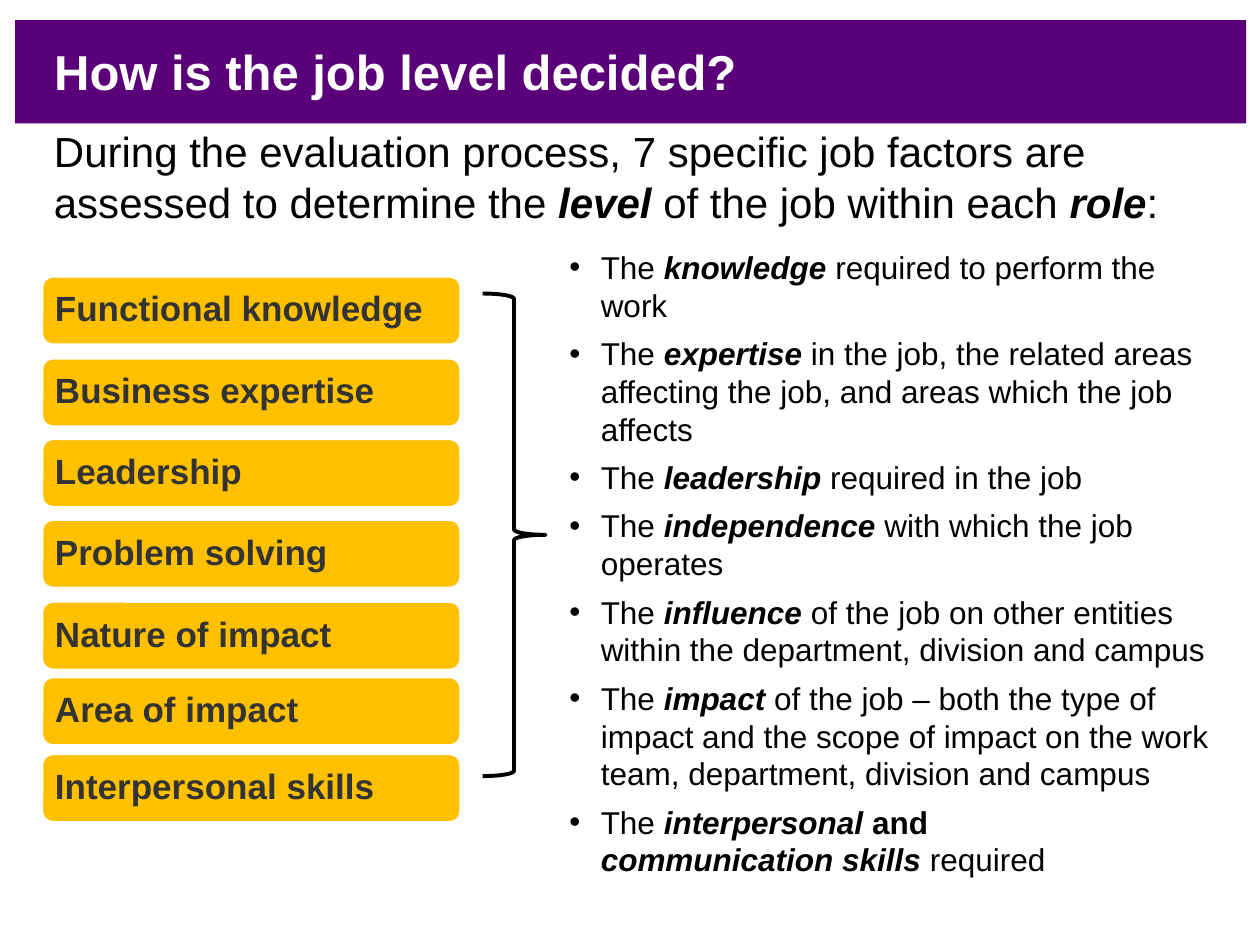
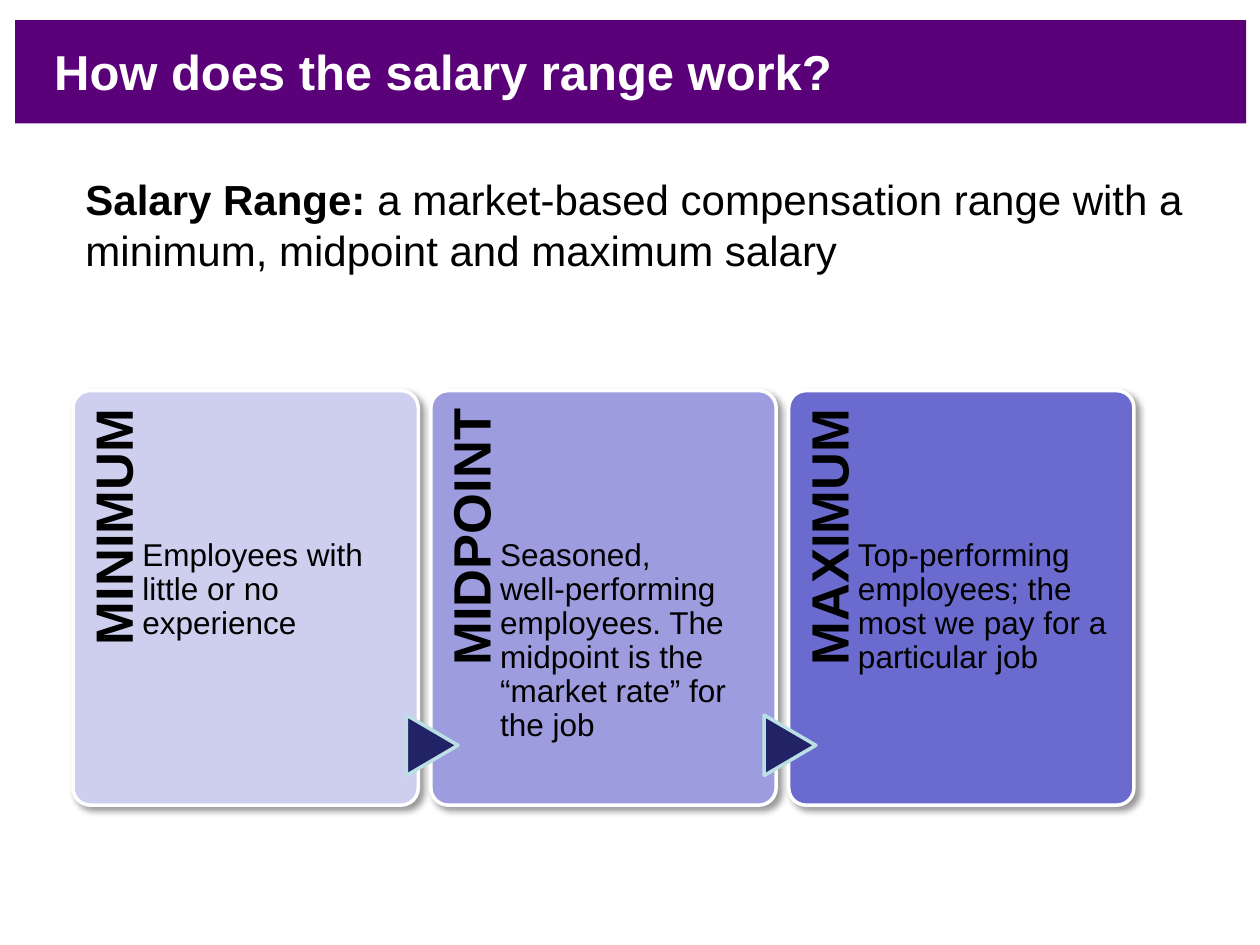
from lxml import etree
from pptx import Presentation
from pptx.dml.color import RGBColor
from pptx.enum.shapes import MSO_SHAPE
from pptx.enum.text import MSO_ANCHOR, MSO_AUTO_SIZE, PP_ALIGN
from pptx.oxml.ns import qn
from pptx.util import Inches, Pt

FONT = "Arial"
COLORS = {
    "band": "5A0078",
    "white": "FFFFFF",
    "black": "000000",
    "factor": "FFC000",
    "factor_text": "333333",
    "minimum": "CECEEF",
    "midpoint": "9C9CDF",
    "maximum": "6B6BCF",
    "arrow": "222267",
    "arrow_line": "BBE0E3",
}

FACTORS = [
    ("Functional knowledge", 2.19),
    ("Business expertise", 2.84),
    ("Leadership", 3.48),
    ("Problem solving", 4.12),
    ("Nature of impact", 4.77),
    ("Area of impact", 5.37),
    ("Interpersonal skills", 5.98),
]

INTRO = [
    ("During the evaluation process, 7 specific job factors are assessed to determine the ", ""),
    ("level", "bi"),
    (" of the job within each ", ""),
    ("role", "bi"),
    (":", ""),
]

DEFINITIONS = [
    [("The ", ""), (factor, "bi"), (rest, "")]
    for factor, rest in [
        ("knowledge", " required to perform the work"),
        ("expertise", " in the job, the related areas affecting the job, and areas which the job affects"),
        ("leadership", " required in the job"),
        ("independence", " with which the job operates"),
        ("influence", " of the job on other entities within the department, division and campus"),
        ("impact", " of the job – both the type of impact and the scope of impact on the work team, "
                   "department, division and campus"),
    ]
] + [[
    ("The ", ""), ("interpersonal", "bi"), (" and", "b"), ("\v", ""),
    ("communication skills ", "bi"), ("required", ""),
]]

SALARY_RANGE = [
    ("Salary Range: ", "b"),
    ("a market-based compensation range with a minimum, midpoint and maximum salary", ""),
]

SALARY_POINTS = [
    ("minimum", "Employees with little or no experience"),
    ("midpoint", "Seasoned,\vwell-performing employees. The midpoint is the “market rate” for the job"),
    ("maximum", "Top-performing employees; the most we pay for a particular job"),
]


def rgb(name):
    return RGBColor.from_string(COLORS[name])


def format_run(r, size, color="black", style=""):
    r.font.name = FONT
    r.font.size = Pt(size)
    r.font.color.rgb = rgb(color)
    r.font.bold = "b" in style
    r.font.italic = "i" in style


def add_runs(p, parts, size):
    for text, style in parts:
        if text == "\v":
            p.add_line_break()
            continue
        r = p.add_run()
        r.text = text
        format_run(r, size, style=style)


def write(tf, text, size, color="black", style=""):
    p = tf.paragraphs[0]
    p.text = text
    for r in p.runs:
        format_run(r, size, color, style)
    return p


def set_margins(tf, left, top, right, bottom):
    tf.margin_left, tf.margin_top = Inches(left), Inches(top)
    tf.margin_right, tf.margin_bottom = Inches(right), Inches(bottom)


def add_text_box(s, left, top, width, height):
    sp = s.shapes.add_textbox(Inches(left), Inches(top), Inches(width), Inches(height))
    sp.text_frame.word_wrap = True
    return sp


def add_shape(s, kind, left, top, width, height, fill=None, line=None, line_width=2):
    sp = s.shapes.add_shape(kind, Inches(left), Inches(top), Inches(width), Inches(height))
    sp.shadow.inherit = False
    if fill:
        sp.fill.solid()
        sp.fill.fore_color.rgb = rgb(fill)
    else:
        sp.fill.background()
    if line:
        sp.line.color.rgb = rgb(line)
        sp.line.width = Pt(line_width)
    else:
        sp.line.fill.background()
    return sp


def add_soft_shadow(sp):
    effects = sp.element.spPr.find(qn("a:effectLst"))
    shadow = etree.SubElement(effects, qn("a:outerShdw"), blurRad=str(Pt(4)),
                              dist=str(Pt(3)), dir="2700000", rotWithShape="0")
    color = etree.SubElement(shadow, qn("a:srgbClr"), val=COLORS["black"])
    etree.SubElement(color, qn("a:alpha"), val="40000")


def add_bullet(p):
    pPr = p._p.get_or_add_pPr()
    pPr.set("marL", str(Inches(0.25)))
    pPr.set("indent", str(-Inches(0.25)))
    etree.SubElement(pPr, qn("a:buFont"), typeface=FONT)
    etree.SubElement(pPr, qn("a:buChar"), char="•")


def add_titled_slide(prs, title):
    s = prs.slides.add_slide(prs.slide_layouts[5])
    band = add_shape(s, MSO_SHAPE.RECTANGLE, 0.12, 0.16, 9.77, 0.82, "band")
    s.shapes.element.insert(2, band.element)
    sp = s.shapes.title
    sp.left, sp.top, sp.width, sp.height = Inches(0.33), Inches(0.25), Inches(9.33), Inches(0.62)
    tf = sp.text_frame
    tf.auto_size = MSO_AUTO_SIZE.NONE
    tf.vertical_anchor = MSO_ANCHOR.MIDDLE
    p = write(tf, title, 28, "white", "b")
    p.alignment = PP_ALIGN.LEFT
    return s


def add_lead(s, parts, left, top, width, height):
    tf = add_text_box(s, left, top, width, height).text_frame
    add_runs(tf.paragraphs[0], parts, 24)


def add_factor(s, label, top):
    sp = add_shape(s, MSO_SHAPE.ROUNDED_RECTANGLE, 0.33, top, 3.33, 0.55, "factor", "white")
    tf = sp.text_frame
    tf.word_wrap = True
    tf.vertical_anchor = MSO_ANCHOR.MIDDLE
    set_margins(tf, 0.08, 0.08, 0.08, 0.08)
    p = write(tf, label, 20, "factor_text", "b")
    p.alignment = PP_ALIGN.LEFT
    p.line_spacing = 0.9


def add_definitions(s, definitions):
    tf = add_text_box(s, 4.42, 1.92, 5.33, 5.15).text_frame
    for i, parts in enumerate(definitions):
        p = tf.add_paragraph() if i else tf.paragraphs[0]
        add_bullet(p)
        if i:
            p.space_before = Pt(6)
        add_runs(p, parts, 18)


def add_salary_card(s, name, description, left, top):
    card = add_shape(s, MSO_SHAPE.ROUNDED_RECTANGLE, left, top, 2.74, 3.29, name, "white")
    card.adjustments[0] = 0.05
    add_soft_shadow(card)

    label = add_text_box(s, left - 1.07, top + 1.07, 2.7, 0.55)
    label.rotation = 270
    set_margins(label.text_frame, 0, 0.11, 0.15, 0)
    p = write(label.text_frame, name.upper(), 30, style="b")
    p.alignment = PP_ALIGN.RIGHT
    p.line_spacing = 0.9

    body = add_text_box(s, left + 0.55, top + 1.18, 2.04, 2.11)
    set_margins(body.text_frame, 0, 0, 0, 0)
    p = write(body.text_frame, description, 18)
    p.line_spacing = 0.9


def add_card_arrow(s, card_left, card_top):
    sp = add_shape(s, MSO_SHAPE.FLOWCHART_EXTRACT, card_left - 0.23, card_top + 2.61,
                   0.48, 0.41, "arrow", "arrow_line")
    sp.rotation = 90


def build_job_level(prs):
    s = add_titled_slide(prs, "How is the job level decided?")
    for label, top in FACTORS:
        add_factor(s, label, top)
    add_definitions(s, DEFINITIONS)
    add_shape(s, MSO_SHAPE.RIGHT_BRACE, 3.83, 2.33, 0.5, 3.83, line="black", line_width=2.25)
    add_lead(s, INTRO, 0.33, 0.95, 9.6, 0.91)


def build_salary_range(prs):
    s = add_titled_slide(prs, "How does the salary range work?")
    add_lead(s, SALARY_RANGE, 0.58, 1.33, 9.08, 1.92)
    top = 3.1
    for i, (name, description) in enumerate(SALARY_POINTS):
        left = 0.58 + 2.84 * i
        add_salary_card(s, name, description, left, top)
        if i:
            add_card_arrow(s, left, top)


def main():
    prs = Presentation()
    prs.slide_width, prs.slide_height = Inches(10), Inches(7.5)
    build_job_level(prs)
    build_salary_range(prs)
    prs.save("out.pptx")


if __name__ == "__main__":
    main()
